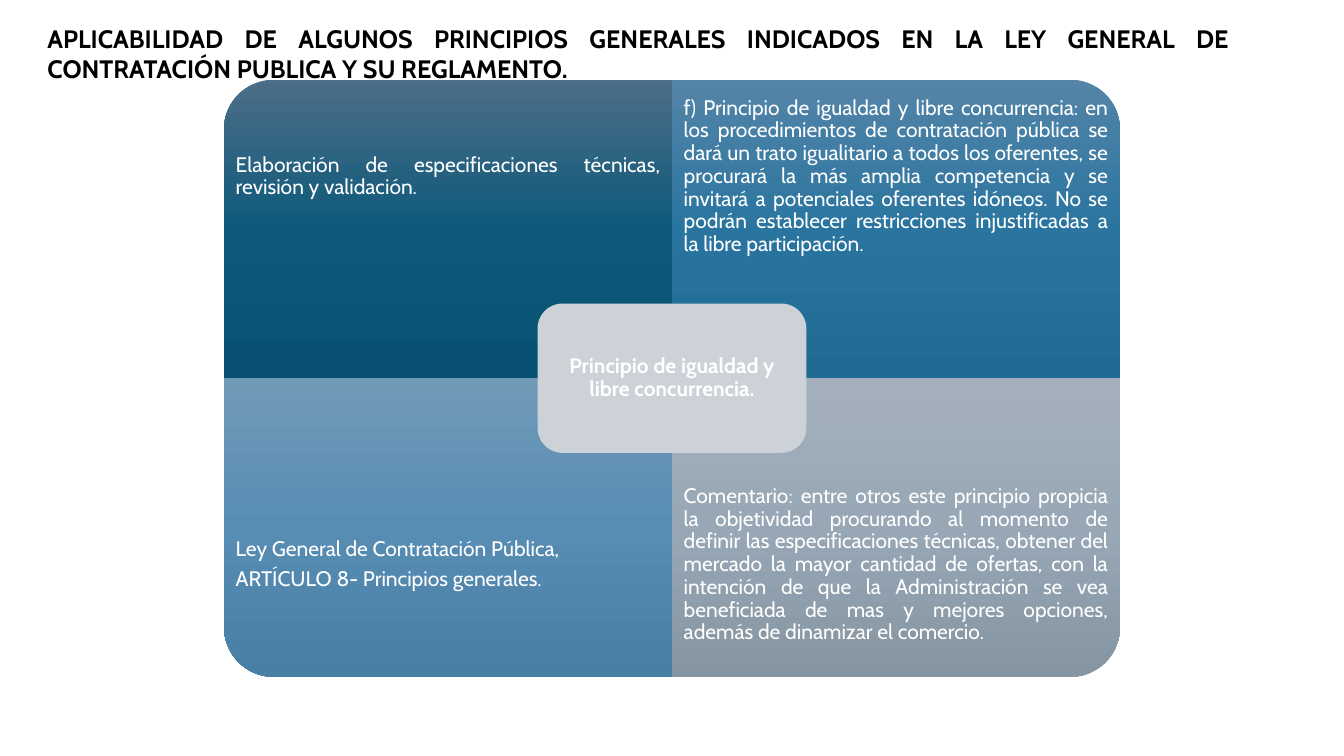
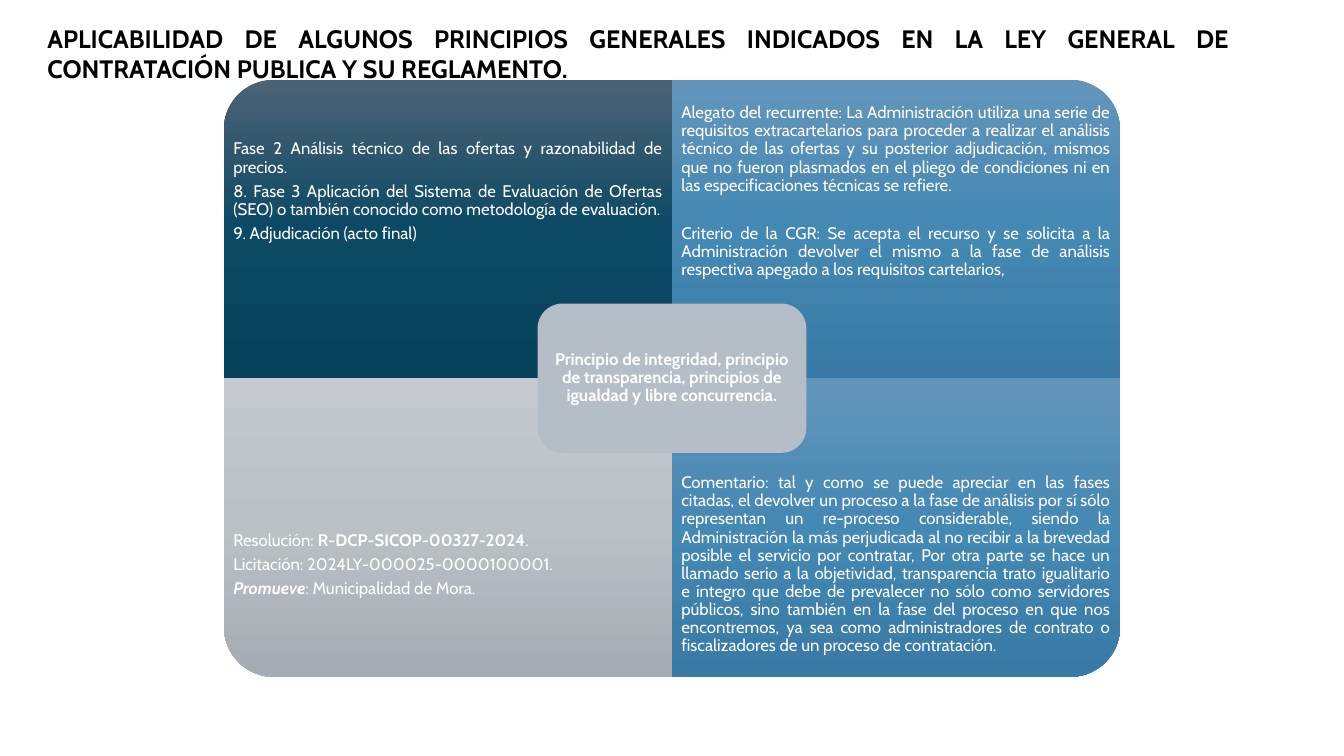
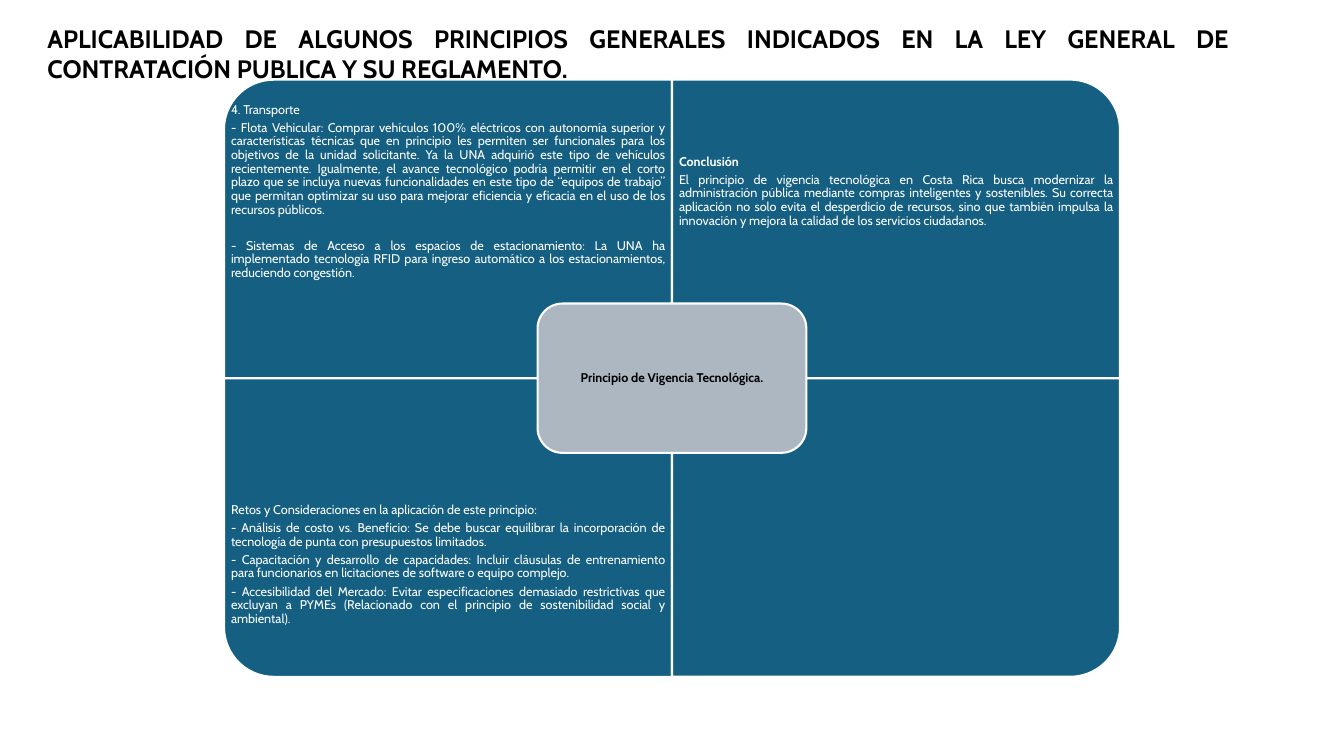
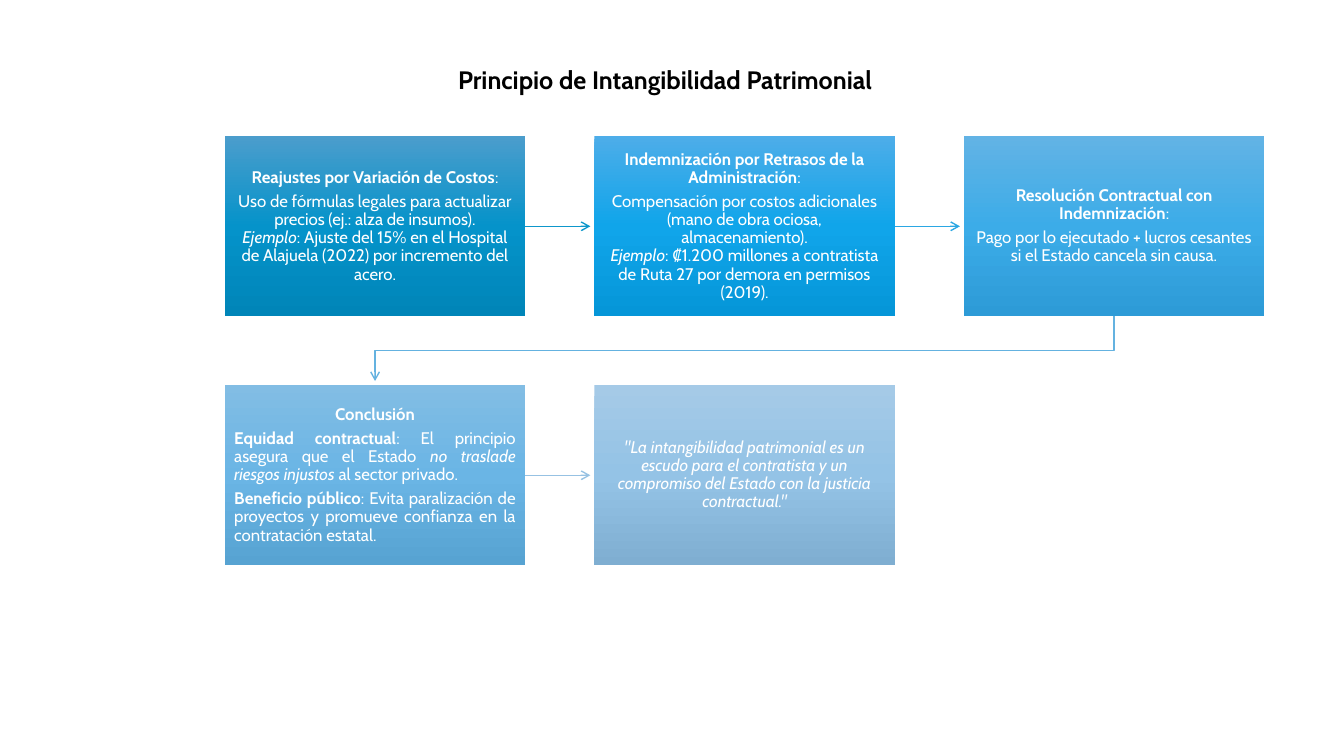
"""Build four slides on the principles of public procurement law."""
import copy
from dataclasses import dataclass
from typing import Optional

import pptx
import pptx.dml.color
import pptx.enum.shapes
import pptx.enum.text
import pptx.oxml.ns
import pptx.presentation
import pptx.shapes.autoshape
import pptx.slide
import pptx.text.text
import pptx.util
from lxml import etree

ALIGN = pptx.enum.text.PP_ALIGN
ANCHOR = pptx.enum.text.MSO_ANCHOR
SHAPE = pptx.enum.shapes.MSO_SHAPE
qn = pptx.oxml.ns.qn

FONT = "Cabin"
COLOURS = {
    "black": "000000",
    "white": "FFFFFF",
    "petrol": "4C6E87 0E597B 085172",
    "ocean": "5484A7 2A75A0 206A93",
    "steel": "7199B8 588DB3 497FA4",
    "slate": "A4B1BC 97A7B5 8595A2",
    "pale": "CCD2D8",
    "navy": "4C6375 0C4964 07425D",
    "azure": "6395BA 4488B4 387AA5",
    "silver": "C3C9CE B9C1C7 A4ABB2",
    "mist": "B5BEC7",
    "teal": "156082",
    "cloud": "ACB7C1",
    "step_1": "4B9DCC 0593CA 0085B8",
    "step_2": "4DADE9 10A5EA 0596D8",
    "step_3": "62B3E5 3CACE8 2D9BD7",
    "step_4": "82BDE4 6AB5E5 57A3D2",
    "step_5": "A5CAE7 94C3E6 7FAED1",
    "arrow_1": "0E97CB",
    "arrow_2": "2BA7E3",
    "arrow_3": "64B2E0",
    "arrow_4": "97C2E3",
}

WIDTH, HEIGHT = 13.33, 7.5
CELL_W, CELL_H = WIDTH / 3, WIDTH / 4.5
MATRIX_LEFT, MATRIX_TOP = WIDTH / 6, 0.79
STEP_W, STEP_H = 2.98, 1.79
STEP_LEFT, STEP_TOP = 2.23, 1.35
STEP_PITCH_X, STEP_PITCH_Y = STEP_W * 1.23, 2.47
ARROW_GAP = 0.04
AFTER, BLANK_LINE, INSET = 0.35, 1.43, 0.56
MATRIX_TITLE = (
    "APLICABILIDAD DE ALGUNOS PRINCIPIOS GENERALES INDICADOS EN LA LEY GENERAL DE "
    "CONTRATACIÓN PUBLICA Y SU REGLAMENTO."
)


@dataclass(frozen=True)
class Box:
    """A rectangle in inches."""

    left: float
    top: float
    width: float
    height: float

    def emu(self) -> tuple:
        """Return the rectangle as python-pptx lengths."""
        return tuple(pptx.util.Inches(v) for v in (self.left, self.top, self.width, self.height))


@dataclass(frozen=True)
class Span:
    """A stretch of text in one style."""

    text: str
    bold: bool = False
    italic: bool = False
    line_break: bool = False


@dataclass(frozen=True)
class Para:
    """A paragraph of spans; gap leaves the height of a line above it."""

    spans: tuple
    align: ALIGN = ALIGN.JUSTIFY
    gap: bool = False


@dataclass(frozen=True)
class Quadrant:
    """One cell of a matrix; lift raises its text, in lines."""

    fill: str
    paras: tuple = ()
    lift: float = 0


@dataclass(frozen=True)
class Matrix:
    """Four quadrants around a central principle."""

    principle: str
    size: float
    centre_fill: str
    quadrants: tuple
    centre_text: str = "white"
    outline: Optional[str] = None


@dataclass(frozen=True)
class Step:
    """One box of the flow, placed by column and row."""

    column: int
    row: int
    fill: str
    paras: tuple

    def box(self) -> Box:
        """Return the rectangle of the step."""
        return Box(STEP_LEFT + self.column * STEP_PITCH_X,
                   STEP_TOP + self.row * STEP_PITCH_Y, STEP_W, STEP_H)


def plain(*texts: str) -> tuple:
    """Return justified paragraphs without emphasis."""
    return tuple(Para((Span(text),)) for text in texts)


def centred(*spans: Span) -> Para:
    """Return a centred paragraph."""
    return Para(spans, ALIGN.CENTER)


def rgb(name: str) -> pptx.dml.color.RGBColor:
    """Return a plain colour by name."""
    return pptx.dml.color.RGBColor.from_string(COLOURS[name])


def style_font(font: pptx.text.text.Font, size: float, colour: str,
               bold: bool = False, italic: bool = False) -> None:
    """Apply the shared font."""
    font.name, font.size = FONT, pptx.util.Pt(size)
    font.bold, font.italic = bold, italic
    font.color.rgb = rgb(colour)


def write(frame: pptx.text.text.TextFrame, paras: tuple, size: float, inset: float = INSET,
          colour: str = "white", lift: float = 0) -> None:
    """Fill a text frame, centred vertically; inset and lift are in text sizes and lines."""
    frame.word_wrap = True
    frame.vertical_anchor = ANCHOR.MIDDLE
    frame.margin_left = frame.margin_right = frame.margin_top = pptx.util.Pt(inset * size)
    frame.margin_bottom = pptx.util.Pt((inset + lift * BLANK_LINE) * size)
    for index, para in enumerate(paras):
        paragraph = frame.add_paragraph() if index else frame.paragraphs[0]
        paragraph.alignment = para.align
        paragraph.line_spacing = 0.9
        paragraph.space_after = pptx.util.Pt(AFTER * size)
        if para.gap:
            paragraph.space_before = pptx.util.Pt(BLANK_LINE * size)
        for span in para.spans:
            run = paragraph.add_run()
            run.text = span.text
            style_font(run.font, size, colour, span.bold, span.italic)
            if span.line_break:
                paragraph.add_line_break()


def paint(shape: pptx.shapes.autoshape.Shape, name: str, outline: Optional[str] = None) -> None:
    """Give a shape its solid or three-stop fill and its outline."""
    shape.shadow.inherit = False
    stops = COLOURS[name].split()
    if len(stops) == 1:
        shape.fill.solid()
        shape.fill.fore_color.rgb = rgb(name)
    else:
        shape.fill.gradient()
        shape.fill.gradient_angle = 270
        gradient = shape._element.spPr.find(qn("a:gradFill"))
        gradient.set("rotWithShape", "0")
        stop_list = gradient.find(qn("a:gsLst"))
        stop_list.append(copy.deepcopy(stop_list[0]))
        for stop, position, value in zip(shape.fill.gradient_stops, (0, 0.5, 1), stops):
            stop.position = position
            stop.color.rgb = pptx.dml.color.RGBColor.from_string(value)
    if outline:
        shape.line.color.rgb = rgb(outline)
        shape.line.width = pptx.util.Pt(1.5)
    else:
        shape.line.fill.background()


def add_titled_slide(deck: pptx.presentation.Presentation, text: str, box: Box,
                     align: ALIGN) -> pptx.slide.Slide:
    """Add a title-only slide and format its title."""
    slide = deck.slides.add_slide(deck.slide_layouts[5])
    title = slide.shapes.title
    title.left, title.top, title.width, title.height = box.emu()
    frame = title.text_frame
    frame.text = text
    frame.word_wrap = True
    frame.auto_size = pptx.enum.text.MSO_AUTO_SIZE.NONE
    frame.vertical_anchor = ANCHOR.TOP
    frame.paragraphs[0].alignment = align
    style_font(frame.paragraphs[0].runs[0].font, 18, "black", bold=True)
    return slide


def add_quadrant(slide: pptx.slide.Slide, matrix: Matrix, index: int) -> None:
    """Draw one quadrant with its rounded corner outwards, and its text."""
    quadrant = matrix.quadrants[index]
    row, column = divmod(index, 2)
    left, top = MATRIX_LEFT + column * CELL_W, MATRIX_TOP + row * CELL_H
    rotation = (270, 0, 180, 90)[index]
    box = Box(left, top, CELL_W, CELL_H)
    if rotation % 180:
        shift = (CELL_W - CELL_H) / 2
        box = Box(left + shift, top - shift, CELL_H, CELL_W)
    panel = slide.shapes.add_shape(SHAPE.ROUND_1_RECTANGLE, *box.emu())
    panel.rotation = rotation
    paint(panel, quadrant.fill, matrix.outline)
    if quadrant.paras:
        text_box = Box(left, top + row * CELL_H / 4, CELL_W, CELL_H * 0.75)
        words = slide.shapes.add_textbox(*text_box.emu())
        write(words.text_frame, quadrant.paras, matrix.size, lift=quadrant.lift)


def add_matrix(deck: pptx.presentation.Presentation, matrix: Matrix) -> None:
    """Add a slide with four quadrants and the principle in the middle."""
    slide = add_titled_slide(deck, MATRIX_TITLE, Box(0.37, 0.18, 11.92, 0.71), ALIGN.JUSTIFY)
    for index in range(len(matrix.quadrants)):
        add_quadrant(slide, matrix, index)
    centre_box = Box(MATRIX_LEFT + CELL_W * 0.7, MATRIX_TOP + CELL_H * 0.75,
                     CELL_W * 0.6, CELL_H * 0.5)
    centre = slide.shapes.add_shape(SHAPE.ROUNDED_RECTANGLE, *centre_box.emu())
    paint(centre, matrix.centre_fill, matrix.outline)
    write(centre.text_frame, (centred(Span(matrix.principle, bold=True)),),
          matrix.size, INSET / 2, matrix.centre_text)


def add_arrow(slide: pptx.slide.Slide, start: Step, end: Step, colour: str) -> None:
    """Join two steps: straight along a row, bent between rows."""
    origin, target = start.box(), end.box()
    if start.row == end.row:
        middle = pptx.util.Inches(origin.top + STEP_H / 2)
        arrow = slide.shapes.add_connector(
            pptx.enum.shapes.MSO_CONNECTOR.STRAIGHT,
            pptx.util.Inches(origin.left + STEP_W), middle,
            pptx.util.Inches(target.left - ARROW_GAP), middle)
        etree.SubElement(arrow._element.spPr, qn("a:effectLst"))
    else:
        start_x = pptx.util.Inches(origin.left + STEP_W / 2)
        end_x = pptx.util.Inches(target.left + STEP_W / 2)
        start_y = pptx.util.Inches(origin.top + STEP_H)
        bend_y = pptx.util.Inches((origin.top + STEP_H + target.top) / 2)
        end_y = pptx.util.Inches(target.top - ARROW_GAP)
        builder = slide.shapes.build_freeform(start_x, start_y)
        builder.add_line_segments(((start_x, bend_y), (end_x, bend_y), (end_x, end_y)), close=False)
        arrow = builder.convert_to_shape()
        arrow.fill.background()
        arrow.shadow.inherit = False
    arrow.line.color.rgb = rgb(colour)
    arrow.line.width = pptx.util.Pt(1)
    etree.SubElement(arrow._element.spPr.find(qn("a:ln")), qn("a:tailEnd"), type="arrow")


def add_flow(deck: pptx.presentation.Presentation, title: str, steps: tuple) -> None:
    """Add a slide with steps joined by arrows."""
    slide = add_titled_slide(deck, title, Box(WIDTH / 3, 0.59, WIDTH / 2, 0.4), ALIGN.LEFT)
    for number, (start, end) in enumerate(zip(steps, steps[1:]), 1):
        add_arrow(slide, start, end, f"arrow_{number}")
    for step in steps:
        panel = slide.shapes.add_shape(SHAPE.RECTANGLE, *step.box().emu())
        paint(panel, step.fill)
        write(panel.text_frame, step.paras, 12)


MATRICES = (
    Matrix("Principio de igualdad y libre concurrencia.", 15, "pale", (
        Quadrant("petrol", plain(
            "Elaboración de especificaciones técnicas, revisión y validación."), lift=1),
        Quadrant("ocean", plain(
            "f) Principio de igualdad y libre concurrencia: en los procedimientos de contratación "
            "pública se dará un trato igualitario a todos los oferentes, se procurará la más amplia "
            "competencia y se invitará a potenciales oferentes idóneos. No se podrán establecer "
            "restricciones injustificadas a la libre participación."), lift=1),
        Quadrant("steel", plain(
            "Ley General de Contratación Pública,", "ARTÍCULO 8- Principios generales.")),
        Quadrant("slate", plain(
            "Comentario: entre otros este principio propicia la objetividad procurando al momento "
            "de definir las especificaciones técnicas, obtener del mercado la mayor cantidad de "
            "ofertas, con la intención de que la Administración se vea beneficiada de mas y mejores "
            "opciones, además de dinamizar el comercio.")),
    )),
    Matrix("Principio de integridad, principio de transparencia, principios de igualdad y libre "
           "concurrencia.", 12, "mist", (
        Quadrant("navy", plain(
            "Fase 2 Análisis técnico de las ofertas y razonabilidad de precios.",
            "8. Fase 3 Aplicación del Sistema de Evaluación de Ofertas (SEO) o también conocido "
            "como metodología de evaluación.",
            "9. Adjudicación (acto final)")),
        Quadrant("azure", plain(
            "Alegato del recurrente: La Administración utiliza una serie de requisitos "
            "extracartelarios para proceder a realizar el análisis técnico de las ofertas y su "
            "posterior adjudicación, mismos que no fueron plasmados en el pliego de condiciones ni "
            "en las especificaciones técnicas se refiere.") + (
            Para((Span(
                "Criterio de la CGR: Se acepta el recurso y se solicita a la Administración devolver "
                "el mismo a la fase de análisis respectiva apegado a los requisitos cartelarios,"),),
                gap=True),)),
        Quadrant("silver", (
            Para((Span("Resolución: "), Span("R-DCP-SICOP-00327-2024", bold=True), Span("."))),
            *plain("Licitación: 2024LY-000025-0000100001."),
            Para((Span("Promueve", bold=True, italic=True), Span(": Municipalidad de Mora."))))),
        Quadrant("azure", plain(
            "Comentario: tal y como se puede apreciar en las fases citadas, el devolver un proceso a "
            "la fase de análisis por sí sólo representan un re-proceso considerable, siendo la "
            "Administración la más perjudicada al no recibir a la brevedad posible el servicio por "
            "contratar, Por otra parte se hace un llamado serio a la objetividad, transparencia "
            "trato igualitario e íntegro que debe de prevalecer no sólo como servidores públicos, "
            "sino también en la fase del proceso en que nos encontremos, ya sea como "
            "administradores de contrato o fiscalizadores de un proceso de contratación.")),
    )),
    Matrix("Principio de Vigencia Tecnológica.", 9, "cloud", (
        Quadrant("teal", plain(
            "4. Transporte",
            "- Flota Vehicular: Comprar vehículos 100% eléctricos con autonomía superior y "
            "características técnicas que en principio les permiten ser funcionales para los "
            "objetivos de la unidad solicitante. Ya la UNA adquirió este tipo de vehículos "
            "recientemente. Igualmente, el avance tecnológico podría permitir en el corto plazo que "
            "se incluya nuevas funcionalidades en este tipo de “equipos de trabajo” que permitan "
            "optimizar su uso para mejorar eficiencia y eficacia en el uso de los recursos "
            "públicos.") + (
            Para((Span(
                "- Sistemas de Acceso a los espacios de estacionamiento: La UNA ha implementado "
                "tecnología RFID para ingreso automático a los estacionamientos, reduciendo "
                "congestión."),), gap=True),)),
        Quadrant("teal", (Para((Span("Conclusión", bold=True),)), *plain(
            "El principio de vigencia tecnológica en Costa Rica busca modernizar la administración "
            "pública mediante compras inteligentes y sostenibles. Su correcta aplicación no solo "
            "evita el desperdicio de recursos, sino que también impulsa la innovación y mejora la "
            "calidad de los servicios ciudadanos."))),
        Quadrant("teal", plain(
            "Retos y Consideraciones en la aplicación de este principio:",
            "- Análisis de costo vs. Beneficio: Se debe buscar equilibrar la incorporación de "
            "tecnología de punta con presupuestos limitados.",
            "- Capacitación y desarrollo de capacidades: Incluir cláusulas de entrenamiento para "
            "funcionarios en licitaciones de software o equipo complejo.",
            "- Accesibilidad del Mercado: Evitar especificaciones demasiado restrictivas que "
            "excluyan a PYMEs (Relacionado con el principio de sostenibilidad social y ambiental).")),
        Quadrant("teal"),
    ), centre_text="black", outline="white"),
)

STEPS = (
    Step(0, 0, "step_1", (
        centred(Span("Reajustes por Variación de Costos", bold=True), Span(":")),
        centred(Span("Uso de fórmulas legales para actualizar precios (ej.: alza de insumos).",
                     line_break=True),
                Span("Ejemplo", italic=True),
                Span(": Ajuste del 15% en el Hospital de Alajuela (2022) por incremento del "
                     "acero.")))),
    Step(1, 0, "step_2", (
        centred(Span("Indemnización por Retrasos de la Administración", bold=True), Span(":")),
        centred(Span("Compensación por costos adicionales (mano de obra ociosa, almacenamiento).",
                     line_break=True),
                Span("Ejemplo", italic=True),
                Span(": ₡1.200 millones a contratista de Ruta 27 por demora en permisos "
                     "(2019).")))),
    Step(2, 0, "step_3", (
        centred(Span("Resolución Contractual con Indemnización", bold=True), Span(":")),
        centred(Span("Pago por lo ejecutado + lucros cesantes si el Estado cancela sin causa.")))),
    Step(0, 1, "step_4", (
        centred(Span("Conclusión", bold=True)),
        Para((Span("Equidad contractual", bold=True),
              Span(": El principio asegura que el Estado "),
              Span("no traslade riesgos injustos", italic=True),
              Span(" al sector privado."))),
        Para((Span("Beneficio público", bold=True),
              Span(": Evita paralización de proyectos y promueve confianza en la contratación "
                   "estatal."))))),
    Step(1, 1, "step_5", (
        centred(Span('"La intangibilidad patrimonial es un escudo para el contratista y un '
                     'compromiso del Estado con la justicia contractual."', italic=True)),)),
)


def main() -> None:
    """Build and save the deck."""
    deck = pptx.Presentation()
    deck.slide_width, deck.slide_height = pptx.util.Inches(WIDTH), pptx.util.Inches(HEIGHT)
    for matrix in MATRICES:
        add_matrix(deck, matrix)
    add_flow(deck, "Principio de Intangibilidad Patrimonial", STEPS)
    deck.save("out.pptx")


if __name__ == "__main__":
    main()
